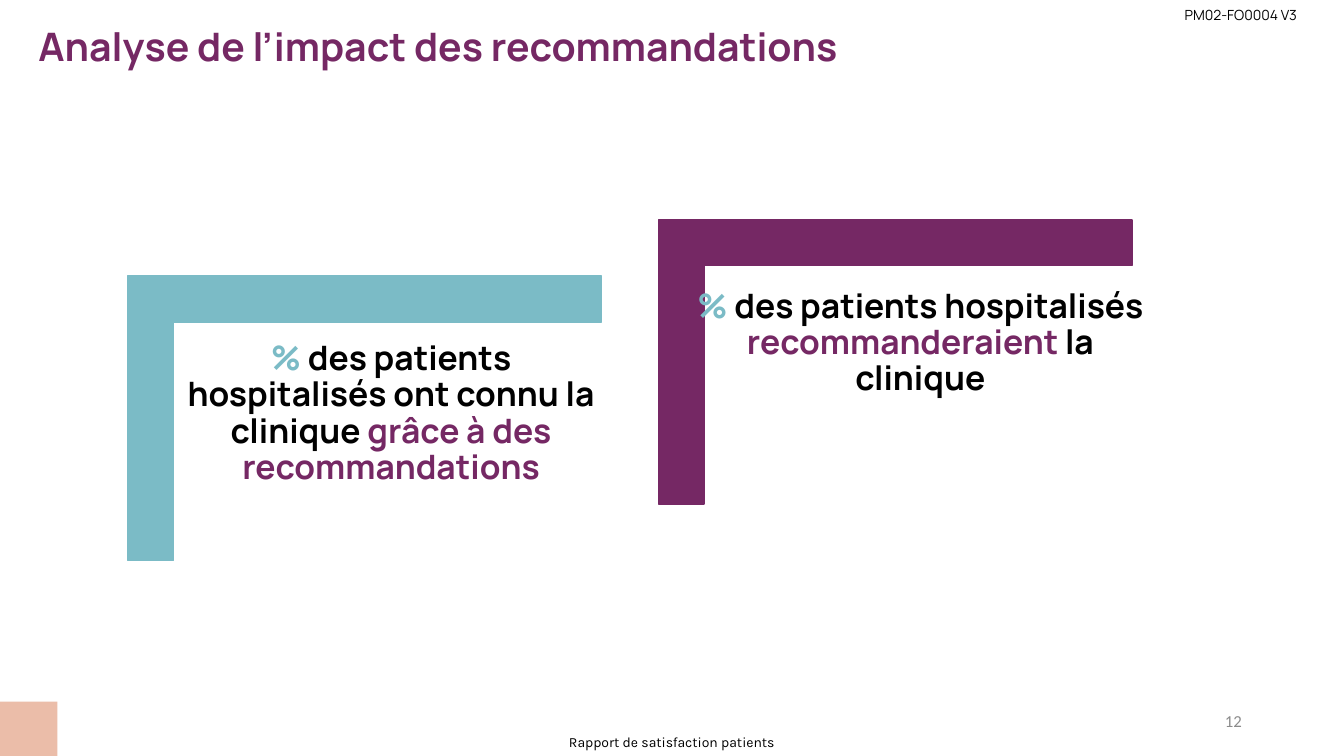
from pptx import Presentation
from pptx.dml.color import RGBColor
from pptx.enum.shapes import MSO_SHAPE
from pptx.enum.text import MSO_ANCHOR, PP_ALIGN
from pptx.util import Cm, Pt

PLUM = RGBColor(0x75, 0x28, 0x64)
TEAL = RGBColor(0x7B, 0xBB, 0xC6)
PEACH = RGBColor(0xEB, 0xBD, 0xA9)
GREY = RGBColor(0x8C, 0x8C, 0x8C)
BLACK = RGBColor(0, 0, 0)

# Boxes are left, top, width, height in cm; text is a list of (words, colour).
TITLE = [("Analyse de l’impact des recommandations", PLUM)]
FOOTER = [("Rapport de satisfaction patients", BLACK)]
PAGE_NUMBER = [("12", GREY)]
FORM_CODE = [("PM02-FO0004 V3", BLACK)]

FINDINGS = [
    {
        "colour": TEAL,
        "bracket_corner": (3.22, 6.96),
        "message_box": (4.29, 8.36, 11.13, 5.77),
        "message": [
            ("% ", TEAL),
            ("des patients hospitalisés ont connu la clinique ", BLACK),
            ("grâce à des recommandations", PLUM),
        ],
    },
    {
        "colour": PLUM,
        "bracket_corner": (16.59, 5.54),
        "message_box": (17.25, 7.04, 11.89, 5.74),
        "message": [
            ("% ", TEAL),
            ("des patients hospitalisés ", BLACK),
            ("recommanderaient", PLUM),
            (" la clinique", BLACK),
        ],
    },
]
BRACKET_WIDTH, BRACKET_HEIGHT = 11.94, 7.16
BRACKET_THICKNESS = 0.161


def add_text(slide, box, pieces, size, font="Manrope", bold=False,
             align=PP_ALIGN.LEFT, anchor=MSO_ANCHOR.TOP,
             inset=(0.25, 0.13), line_spacing=None):
    frame = slide.shapes.add_textbox(*map(Cm, box)).text_frame
    frame.word_wrap = True
    frame.vertical_anchor = anchor
    frame.margin_left = frame.margin_right = Cm(inset[0])
    frame.margin_top = frame.margin_bottom = Cm(inset[1])
    paragraph = frame.paragraphs[0]
    paragraph.alignment = align
    paragraph.line_spacing = line_spacing
    for words, colour in pieces:
        run = paragraph.add_run()
        run.text = words
        run.font.name = font
        run.font.size = Pt(size)
        run.font.bold = bold
        run.font.color.rgb = colour


def add_filled(slide, preset, box, colour):
    shape = slide.shapes.add_shape(preset, *map(Cm, box))
    shape.shadow.inherit = False
    shape.fill.solid()
    shape.fill.fore_color.rgb = colour
    shape.line.fill.background()
    return shape


def add_bracket(slide, left, top, colour):
    """Turn an upright L a quarter so its elbow sits at (left, top)."""
    shift = (BRACKET_WIDTH - BRACKET_HEIGHT) / 2
    box = (left + shift, top - shift, BRACKET_HEIGHT, BRACKET_WIDTH)
    bracket = add_filled(slide, MSO_SHAPE.CORNER, box, colour)
    bracket.rotation = 90
    for index in range(2):
        bracket.adjustments[index] = BRACKET_THICKNESS
    bracket.line.color.rgb = colour
    bracket.line.width = Pt(1)


def main():
    deck = Presentation()
    deck.slide_width, deck.slide_height = Cm(33.87), Cm(19.05)
    slide = deck.slides.add_slide(deck.slide_layouts[6])

    add_text(slide, (0.97, 0.56, 28.83, 1.19), TITLE, 28, bold=True,
             anchor=MSO_ANCHOR.MIDDLE, inset=(0, 0))
    add_filled(slide, MSO_SHAPE.RECTANGLE, (0, 17.68, 1.45, 1.37), PEACH)
    for finding in FINDINGS:
        add_bracket(slide, *finding["bracket_corner"], finding["colour"])
        add_text(slide, finding["message_box"], finding["message"], 24,
                 bold=True, align=PP_ALIGN.CENTER, inset=(0.25, 0.25),
                 line_spacing=0.9)
    add_text(slide, (8.46, 18.36, 16.94, 0.69), FOOTER, 10, font="Karla",
             align=PP_ALIGN.CENTER)
    add_text(slide, (23.93, 17.65, 7.62, 1.02), PAGE_NUMBER, 12,
             font="Calibri", align=PP_ALIGN.RIGHT, anchor=MSO_ANCHOR.MIDDLE)
    add_text(slide, (27.74, 0.03, 7.06, 0.69), FORM_CODE, 10,
             align=PP_ALIGN.CENTER)

    deck.save("out.pptx")


if __name__ == "__main__":
    main()
